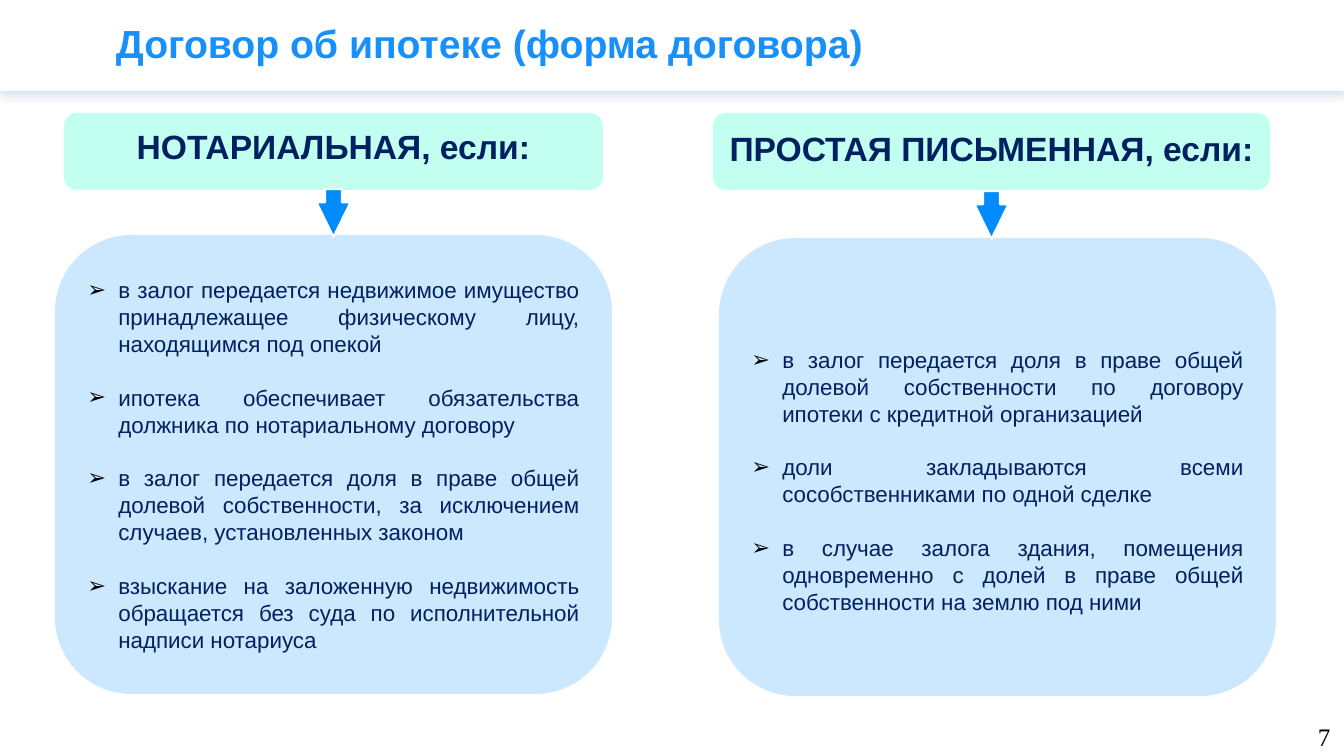
from lxml.etree import SubElement
from pptx import Presentation
from pptx.dml.color import RGBColor
from pptx.enum.shapes import MSO_SHAPE as Preset
from pptx.enum.text import MSO_ANCHOR as Anchor, PP_ALIGN as Align
from pptx.oxml.ns import qn
from pptx.util import Pt

# Content
TITLE = "Договор об ипотеке (форма договора)"
PAGE_NUMBER = "7"
COLUMNS = [
    {
        "heading": "НОТАРИАЛЬНАЯ, если:",
        "heading_box": (64, 113, 539, 77), "heading_lift": 11,
        "arrow_top": 189,
        "panel_box": (55, 235, 557, 459), "panel_drop": 0,
        "points": [
            "в залог передается недвижимое имущество принадлежащее "
            "физическому лицу, находящимся под опекой",
            "ипотека обеспечивает обязательства должника по нотариальному договору",
            "в залог передается доля в праве общей долевой собственности, "
            "за исключением случаев, установленных законом",
            "взыскание на заложенную недвижимость обращается без суда "
            "по исполнительной надписи нотариуса",
        ],
    },
    {
        "heading": "ПРОСТАЯ ПИСЬМЕННАЯ, если:",
        "heading_box": (713, 113, 557, 77), "heading_lift": 7,
        "arrow_top": 191,
        "panel_box": (719, 238, 557, 458), "panel_drop": 27,
        "points": [
            "в залог передается доля в праве общей долевой собственности "
            "по договору ипотеки с кредитной организацией",
            "доли закладываются всеми сособственниками по одной сделке",
            "в случае залога здания, помещения одновременно с долей "
            "в праве общей собственности на землю под ними",
        ],
    },
]

# Style
WHITE = RGBColor(0xFF, 0xFF, 0xFF)
BLACK = RGBColor(0, 0, 0)
TITLE_BLUE = RGBColor(0x18, 0x90, 0xFB)
NAVY = RGBColor(0, 0x20, 0x60)
MINT = RGBColor(0xC2, 0xFF, 0xF0)
PALE_BLUE = RGBColor(0xCC, 0xE8, 0xFF)
ARROW_BLUE = RGBColor(0, 0x8C, 0xFF)
SHADOW_BLUE = RGBColor(0, 0x46, 0x80)
ARROW_WIDTH, ARROW_HEIGHT = 34, 48
HANGING_INDENT = 31
LINE_PITCH = Pt(19.2)


def px(length):
    return round(length * 914400 / 100.8)


def place(shape, box):
    shape.left, shape.top, shape.width, shape.height = map(px, box)


def add_block(preset, box, fill):
    shape = slide.shapes.add_shape(preset, *map(px, box))
    shape.shadow.inherit = False
    shape.fill.solid()
    shape.fill.fore_color.rgb = fill
    shape.line.fill.background()
    return shape


def set_insets(frame, side=10, top=5, bottom=5):
    frame.word_wrap = True
    frame.vertical_anchor = Anchor.MIDDLE
    frame.margin_left = frame.margin_right = px(side)
    frame.margin_top, frame.margin_bottom = px(top), px(bottom)


def write(para, text, size, color, bold=False, name="Arial", align=Align.LEFT):
    para.alignment = align
    span = para.add_run()
    span.text = text
    span.font.size, span.font.bold, span.font.name = Pt(size), bold, name
    span.font.color.rgb = color


def add_bullet(para):
    props = para._p.get_or_add_pPr()
    props.set("marL", str(px(HANGING_INDENT)))
    props.set("indent", str(-px(HANGING_INDENT)))
    SubElement(SubElement(props, qn("a:buClr")), qn("a:srgbClr"), val=str(BLACK))
    SubElement(props, qn("a:buFont"), typeface="Arial")
    SubElement(props, qn("a:buChar"), char="➢")


def add_soft_shadow(shape):
    effects = shape._element.spPr.find(qn("a:effectLst"))
    shadow = SubElement(effects, qn("a:outerShdw"), blurRad=str(Pt(6)),
                        dist=str(Pt(3)), dir="5400000", rotWithShape="0")
    color = SubElement(shadow, qn("a:srgbClr"), val=str(SHADOW_BLUE))
    SubElement(color, qn("a:alpha"), val="15000")


deck = Presentation()
deck.slide_width, deck.slide_height = px(1344), px(756)
slide = deck.slides.add_slide(deck.slide_layouts[5])

# Header bar and title
bar = add_block(Preset.RECTANGLE, (0, 0, 1344, 91), WHITE)
add_soft_shadow(bar)
title = slide.shapes.title
bar._element.addnext(title._element)
place(title, (106, 0, 1214, 91))
set_insets(title.text_frame)
title_para = title.text_frame.paragraphs[0]
title_para.line_spacing = 0.9
write(title_para, TITLE, 28, TITLE_BLUE, bold=True)

for column in COLUMNS:
    # Panel with the list of cases
    panel = add_block(Preset.ROUNDED_RECTANGLE, column["panel_box"], PALE_BLUE)
    frame = panel.text_frame
    set_insets(frame, top=5 + column["panel_drop"])
    for index, point in enumerate(column["points"]):
        para = frame.add_paragraph() if index else frame.paragraphs[0]
        add_bullet(para)
        para.line_spacing = LINE_PITCH
        if index:
            para.space_before = LINE_PITCH
        write(para, point, 16, NAVY, align=Align.JUSTIFY)

    # Heading
    heading = add_block(Preset.ROUNDED_RECTANGLE, column["heading_box"], MINT)
    set_insets(heading.text_frame, side=0, bottom=5 + column["heading_lift"])
    write(heading.text_frame.paragraphs[0], column["heading"], 24, NAVY,
          bold=True, align=Align.CENTER)

    # Arrow from the heading to the panel
    left, _, width, _ = column["heading_box"]
    arrow_left = left + (width - ARROW_WIDTH) / 2
    arrow = add_block(Preset.DOWN_ARROW, (arrow_left, column["arrow_top"],
                                          ARROW_WIDTH, ARROW_HEIGHT), ARROW_BLUE)
    arrow.adjustments[0], arrow.adjustments[1] = 0.5, 1.02
    arrow.line.color.rgb = WHITE
    arrow.line.width = Pt(1.5)

# Page number
number = slide.shapes.add_textbox(*map(px, (1308, 716, 35, 40)))
set_insets(number.text_frame)
write(number.text_frame.paragraphs[0], PAGE_NUMBER, 18, BLACK, name="Times New Roman")

deck.save("out.pptx")
